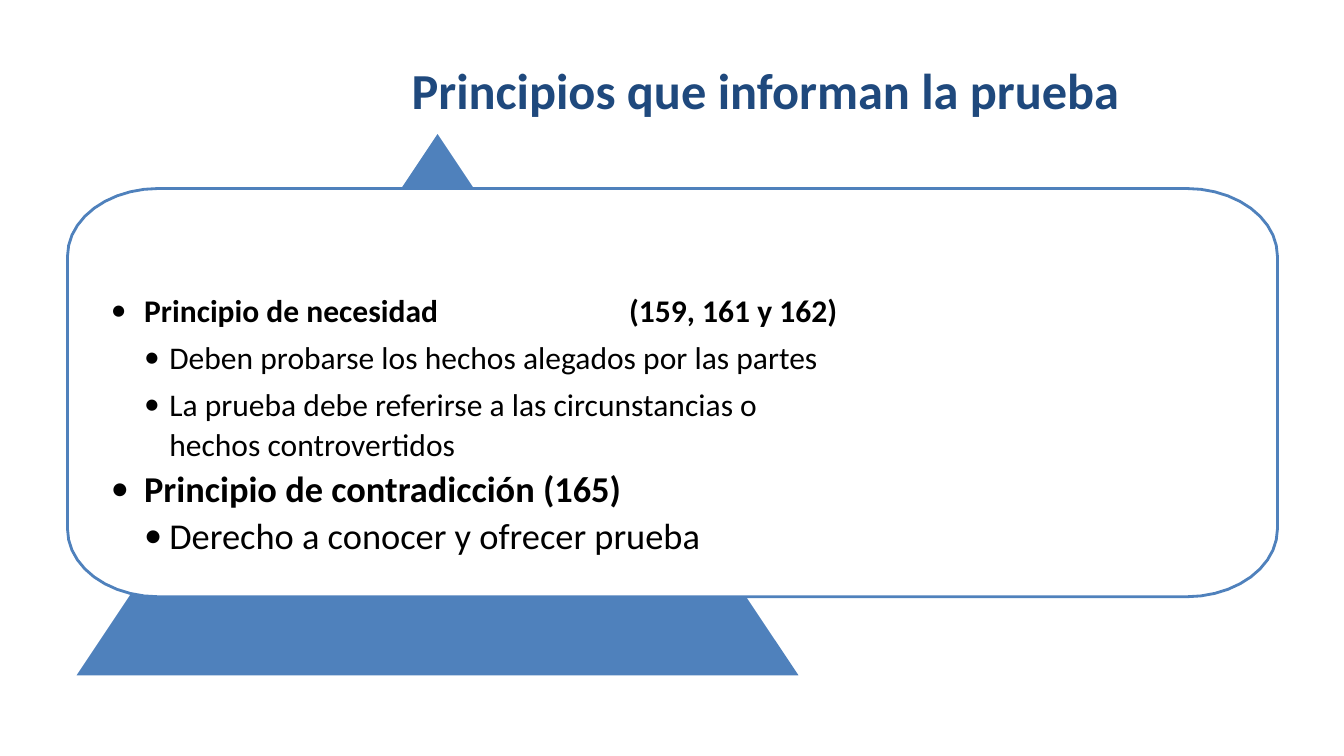
from math import cos, pi, sin

from lxml.etree import SubElement
from pptx import Presentation
from pptx.dml.color import RGBColor
from pptx.enum.shapes import MSO_SHAPE as Preset
from pptx.enum.text import MSO_ANCHOR as Anchor, PP_ALIGN as Align
from pptx.oxml.ns import qn
from pptx.util import Inches, Pt

COLORS = {"accent": "4F81BC", "title": "1F497D", "text": "000000", "panel": "FFFFFF"}
FONT = "Calibri"
LEVELS = [{"margin": 0.33, "hang": 0.33, "bold": True},
          {"margin": 0.58, "hang": 0.25, "bold": False}]
PRINCIPLES = [
    (0, 22.5, "Principio de necesidad"),
    (1, 22.5, "Deben probarse los hechos alegados por las partes"),
    (1, 22.5, "La prueba debe referirse a las circunstancias o\vhechos controvertidos"),
    (0, 26, "Principio de contradicción (165)"),
    (1, 26, "Derecho a conocer y ofrecer prueba"),
]


def rgb(name):
    """Return the named palette colour."""
    return RGBColor.from_string(COLORS[name])


def set_font(paragraph, size, color, bold):
    """Format the whole paragraph with one font."""
    font = paragraph.font
    font.name, font.size, font.bold = FONT, Pt(size), bold
    font.color.rgb = rgb(color)


def prepare_frame(frame):
    """Remove the margins and anchor the wrapped text at the top."""
    frame.word_wrap = True
    frame.vertical_anchor = Anchor.TOP
    frame.margin_left = frame.margin_right = frame.margin_top = frame.margin_bottom = 0
    return frame


def add_bullet(paragraph, level):
    """Give the paragraph a hanging round bullet."""
    props = paragraph._p.get_or_add_pPr()
    props.set("marL", str(Inches(level["margin"])))
    props.set("indent", str(-Inches(level["hang"])))
    SubElement(props, qn("a:buFont"), typeface=FONT)
    SubElement(props, qn("a:buChar"), char="•")


def set_title(slide, text):
    """Place and format the slide title."""
    title = slide.shapes.title
    title.left, title.top = Inches(3.45), Inches(0.59)
    title.width, title.height = Inches(8.29), Inches(0.63)
    paragraph = prepare_frame(title.text_frame).paragraphs[0]
    paragraph.text = text
    paragraph.alignment = Align.CENTER
    set_font(paragraph, 36, "title", True)


def add_triangle(slide, left, top, width, height):
    """Draw the solid triangle behind the panel."""
    triangle = slide.shapes.add_shape(
        Preset.ISOSCELES_TRIANGLE, Inches(left), Inches(top), Inches(width), Inches(height))
    triangle.shadow.inherit = False
    triangle.fill.solid()
    triangle.fill.fore_color.rgb = rgb("accent")
    triangle.line.fill.background()


def add_panel(slide, left, top, width, height, radius_x, radius_y, steps=10):
    """Draw an outlined panel with elliptical corners."""
    right, bottom = left + width - radius_x, top + height - radius_y
    centers = [(right, bottom), (left + radius_x, bottom),
               (left + radius_x, top + radius_y), (right, top + radius_y)]
    outline = []
    for corner, (x, y) in enumerate(centers):
        for step in range(steps + 1):
            angle = pi / 2 * (corner + step / steps)
            outline.append((Inches(x + radius_x * cos(angle)),
                            Inches(y + radius_y * sin(angle))))
    builder = slide.shapes.build_freeform(*outline[0])
    builder.add_line_segments(outline[1:], close=True)
    panel = builder.convert_to_shape()
    panel.shadow.inherit = False
    panel.fill.solid()
    panel.fill.fore_color.rgb = rgb("panel")
    panel.line.color.rgb = rgb("accent")
    panel.line.width = Pt(2)


def add_text(slide, left, top, width, height, items, bulleted=True):
    """Add a text box of (level, size, text) items."""
    box = slide.shapes.add_textbox(Inches(left), Inches(top), Inches(width), Inches(height))
    frame = prepare_frame(box.text_frame)
    for index, (level, size, text) in enumerate(items):
        paragraph = frame.add_paragraph() if index else frame.paragraphs[0]
        paragraph.text = text
        paragraph.line_spacing = Pt(28.5)
        if index:
            paragraph.space_before = Pt(5)
        if bulleted:
            add_bullet(paragraph, LEVELS[level])
        set_font(paragraph, size, "text", LEVELS[level]["bold"])


def main():
    """Build and save the slide."""
    deck = Presentation()
    deck.slide_width, deck.slide_height = Inches(13.33), Inches(7.5)
    slide = deck.slides.add_slide(deck.slide_layouts[5])
    set_title(slide, "Principios que informan la prueba")
    add_triangle(slide, 0.76, 1.33, 7.16, 5.37)
    add_panel(slide, 0.67, 1.87, 12, 4.05, 0.9, 0.67)
    add_text(slide, 1.1, 2.87, 9.4, 2.7, PRINCIPLES)
    add_text(slide, 6.24, 2.87, 3.28, 0.39, [(0, 22.5, "(159, 161 y 162)")], bulleted=False)
    deck.save("out.pptx")


if __name__ == "__main__":
    main()
